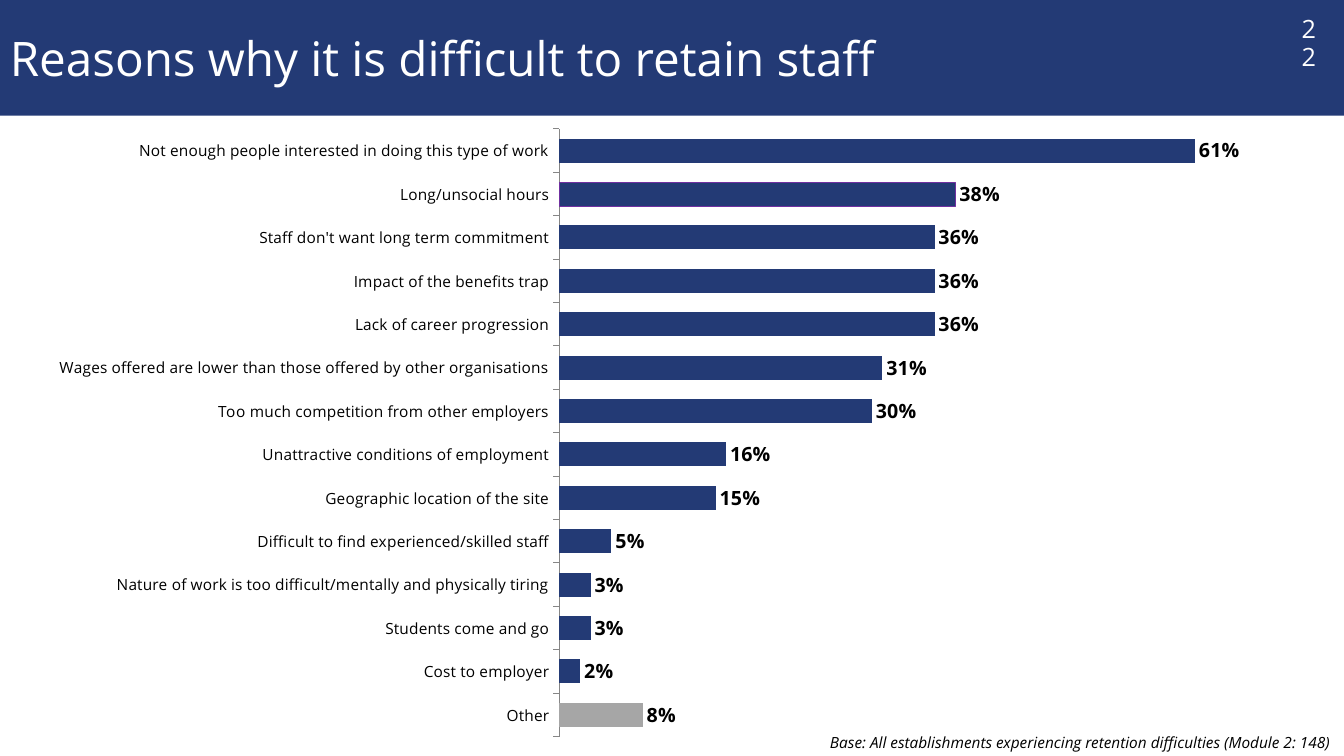
from lxml.etree import SubElement
from pptx import Presentation
from pptx.chart.data import CategoryChartData
from pptx.dml.color import RGBColor
from pptx.enum.chart import XL_CHART_TYPE, XL_LABEL_POSITION, XL_TICK_MARK
from pptx.enum.shapes import MSO_SHAPE
from pptx.enum.text import MSO_ANCHOR, PP_ALIGN
from pptx.oxml import parse_xml
from pptx.oxml.ns import nsdecls, qn
from pptx.util import Inches, Pt

WIDTH, HEIGHT = 13.33, 7.5
FONT = "Open Sans"
COLORS = {
    "navy": "233A75",
    "grey": "A6A6A6",
    "axis": "868686",
    "purple": "7030A0",
    "white": "FFFFFF",
    "black": "000000",
}
REASONS = [
    ("Other", 0.08),
    ("Cost to employer", 0.02),
    ("Students come and go", 0.03),
    ("Nature of work is too difficult/mentally and physically tiring", 0.03),
    ("Difficult to find experienced/skilled staff", 0.05),
    ("Geographic location of the site", 0.15),
    ("Unattractive conditions of employment", 0.16),
    ("Too much competition from other employers", 0.30),
    ("Wages offered are lower than those offered by other organisations", 0.31),
    ("Lack of career progression", 0.36),
    ("Impact of the benefits trap", 0.36),
    ("Staff don't want long term commitment", 0.36),
    ("Long/unsocial hours", 0.38),
    ("Not enough people interested in doing this type of work", 0.61),
]


class SlideBuilder:
    """Holds the style and the current slide, and draws each kind of element."""

    def __init__(self, slide):
        self.slide = slide

    def color(self, name):
        return RGBColor.from_string(COLORS[name])

    def place(self, left, top, width, height):
        return (Inches(left * WIDTH), Inches(top * HEIGHT),
                Inches(width * WIDTH), Inches(height * HEIGHT))

    def style(self, font, size, color="black", bold=False, italic=False):
        font.name, font.size = FONT, Pt(size)
        font.bold, font.italic = bold, italic
        font.color.rgb = self.color(color)

    def fill_text(self, frame, text, size, color, align=PP_ALIGN.LEFT, italic=False):
        frame.word_wrap = True
        frame.text = text
        paragraph = frame.paragraphs[0]
        paragraph.alignment = align
        self.style(paragraph.runs[0].font, size, color, italic=italic)
        return paragraph

    def banner(self, box, text, size):
        band = self.slide.shapes.add_shape(MSO_SHAPE.RECTANGLE, *self.place(*box))
        band.shadow.inherit = False
        band.fill.solid()
        band.fill.fore_color.rgb = self.color("navy")
        band.line.fill.background()
        band.text_frame.vertical_anchor = MSO_ANCHOR.MIDDLE
        self.fill_text(band.text_frame, text, size, "white")

    def label(self, box, text, size, color, margins=(0.1, 0.05), **options):
        frame = self.slide.shapes.add_textbox(*self.place(*box)).text_frame
        frame.margin_left = frame.margin_right = Inches(margins[0])
        frame.margin_top = frame.margin_bottom = Inches(margins[1])
        return self.fill_text(frame, text, size, color, **options)

    def bar_chart(self, box, rows, plot):
        data = CategoryChartData(number_format="0%")
        data.categories = [reason for reason, _ in rows]
        data.add_series("Series 1", [share for _, share in rows])
        chart = self.slide.shapes.add_chart(
            XL_CHART_TYPE.BAR_CLUSTERED, *self.place(*box), data).chart
        chart.has_legend = chart.has_title = False
        self.style(chart.font, 18)

        shares = chart.value_axis
        shares.minimum_scale, shares.maximum_scale = 0, 0.7
        shares.has_major_gridlines = False
        shares.visible = False
        reasons = chart.category_axis
        reasons.major_tick_mark = XL_TICK_MARK.OUTSIDE
        reasons.format.line.color.rgb = self.color("axis")
        reasons.format.line.width = Pt(0.75)
        self.style(reasons.tick_labels.font, 11)

        bars = chart.plots[0]
        bars.gap_width = 80
        bars.vary_by_categories = False
        series = bars.series[0]
        self.paint(series, "navy")
        self.paint(series.points[0], "grey")
        hours = series.points[12]
        self.paint(hours, "navy")
        hours.format.line.color.rgb = self.color("purple")
        hours.format.line.width = Pt(0.5)
        values = series.data_labels
        values.show_value = True
        values.number_format, values.number_format_is_linked = "0%", False
        values.position = XL_LABEL_POSITION.OUTSIDE_END
        self.style(values.font, 14, bold=True)
        self.fix_plot(chart, plot)

    def paint(self, bar, color):
        bar.format.fill.solid()
        bar.format.fill.fore_color.rgb = self.color(color)

    def fix_plot(self, chart, plot):
        area = chart.plots[0]._element.getparent()
        for layout in area.findall(qn("c:layout")):
            area.remove(layout)
        layout = parse_xml(f"<c:layout {nsdecls('c')}><c:manualLayout/></c:layout>")
        settings = [("layoutTarget", "inner"), ("xMode", "edge"), ("yMode", "edge"),
                    *zip("xywh", plot)]
        for tag, value in settings:
            SubElement(layout[0], qn(f"c:{tag}")).set("val", str(value))
        area.insert(0, layout)


def main():
    presentation = Presentation()
    presentation.slide_width = Inches(WIDTH)
    presentation.slide_height = Inches(HEIGHT)
    builder = SlideBuilder(presentation.slides.add_slide(presentation.slide_layouts[6]))
    builder.bar_chart((0, 0.153, 0.959, 0.839), REASONS, (0.434, 0.021, 0.566, 0.958))
    builder.label((0.425, 0.961, 0.575, 0.043),
                  "Base: All establishments experiencing retention difficulties (Module 2: 148)",
                  11, "black", margins=(0.13, 0.07), align=PP_ALIGN.RIGHT, italic=True)
    builder.banner((0, 0, 1, 0.153), "Reasons why it is difficult to retain staff", 34)
    page_number = builder.label((0.961, 0.016, 0.036, 0.053), "22", 18, "white")
    page_number.line_spacing = 0.9
    presentation.save("out.pptx")


if __name__ == "__main__":
    main()
